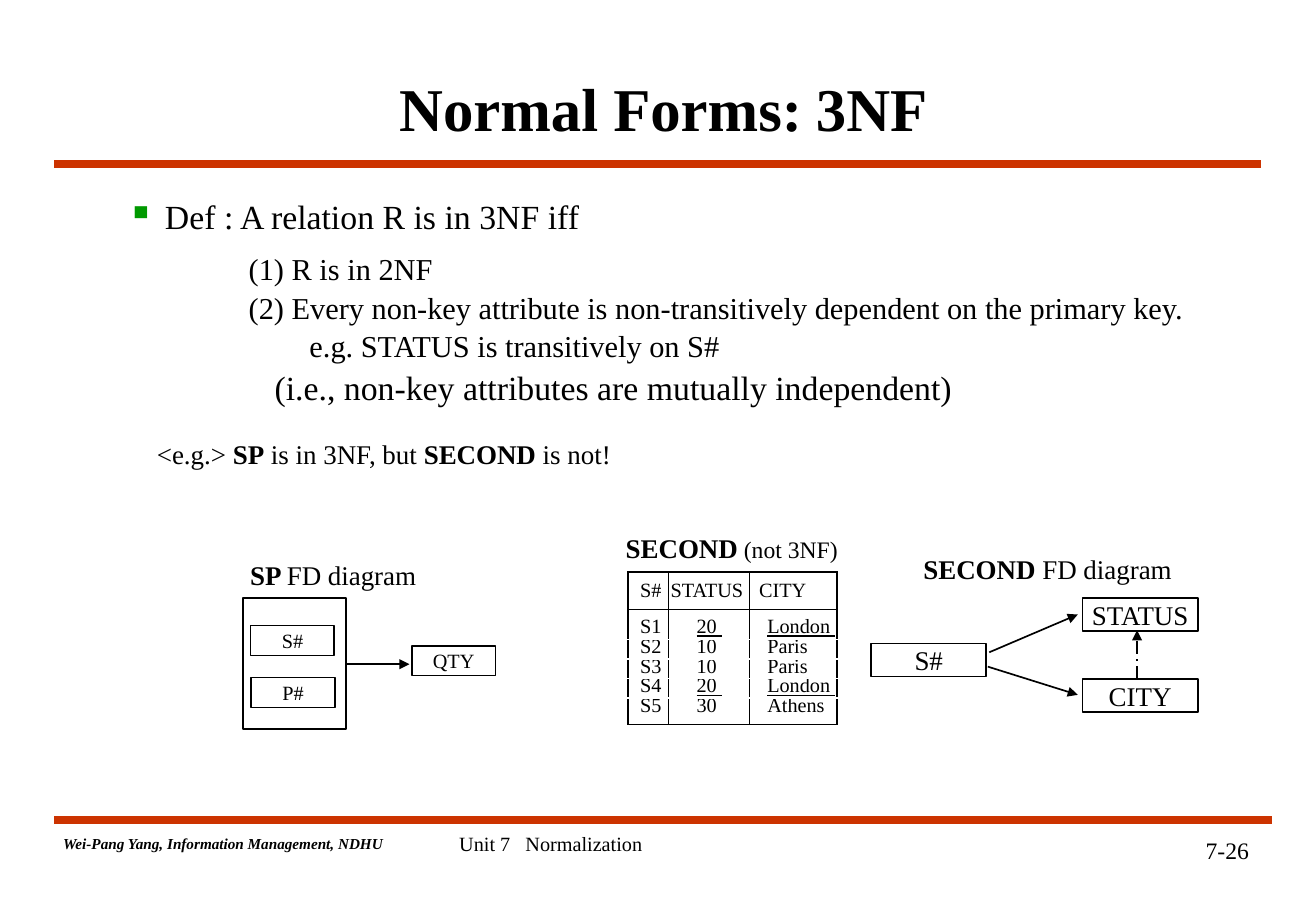
from dataclasses import dataclass

from lxml import etree
from pptx import Presentation
from pptx.dml.color import RGBColor
from pptx.enum.dml import MSO_LINE
from pptx.enum.shapes import MSO_CONNECTOR, MSO_SHAPE
from pptx.enum.text import MSO_ANCHOR, PP_ALIGN
from pptx.oxml.ns import qn
from pptx.util import Cm, Pt

LEFT, CENTER, RIGHT = PP_ALIGN.LEFT, PP_ALIGN.CENTER, PP_ALIGN.RIGHT
TOP, MIDDLE = MSO_ANCHOR.TOP, MSO_ANCHOR.MIDDLE
RECTANGLE, STRAIGHT = MSO_SHAPE.RECTANGLE, MSO_CONNECTOR.STRAIGHT
LONG_DASH_DOT = MSO_LINE.LONG_DASH_DOT

FONT = "Times New Roman"
COLORS = {"ink": "000000", "paper": "FFFFFF", "rule": "CC3300", "bullet": "009900"}


def rgb(name: str) -> RGBColor:
    return RGBColor.from_string(COLORS[name])


@dataclass
class Run:
    text: str
    size: float
    bold: bool = False
    italic: bool = False
    underline: bool = False


@dataclass
class Para:
    runs: list[Run]
    align: PP_ALIGN = LEFT
    line_spacing: float = 1.0
    before: float = 0
    margin: float = 0
    bullet: str = ""


@dataclass
class Label:
    """A text box; lengths in cm."""
    x: float
    y: float
    w: float
    h: float
    paras: list[Para]
    anchor: MSO_ANCHOR = TOP


@dataclass
class Box:
    """A bordered node of a dependency diagram; lengths in cm."""
    x: float
    y: float
    w: float
    h: float
    text: str = ""
    size: float = 12


@dataclass
class Line:
    x1: float
    y1: float
    x2: float
    y2: float
    color: str = "ink"
    width: float = 1
    arrow: bool = True
    dashed: bool = False


@dataclass
class Column:
    width: float
    header_indent: float
    body_indent: float
    cells: list[str]


def write_para(paragraph, para: Para) -> None:
    paragraph.alignment = para.align
    paragraph.line_spacing = para.line_spacing
    paragraph.space_before = Pt(para.before)
    props = paragraph._p.get_or_add_pPr()
    props.set("marL", str(Cm(para.margin)))
    if para.bullet:
        props.set("indent", str(Cm(-0.79)))
        color = etree.SubElement(props, qn("a:buClr"))
        etree.SubElement(color, qn("a:srgbClr"), val=COLORS["bullet"])
        etree.SubElement(props, qn("a:buSzPct"), val="110000")
        etree.SubElement(props, qn("a:buChar"), char=para.bullet)
    for item in para.runs:
        run = paragraph.add_run()
        run.text = item.text
        font = run.font
        font.name, font.size = FONT, Pt(item.size)
        font.bold, font.italic, font.underline = item.bold, item.italic, item.underline
        font.color.rgb = rgb("ink")


def draw_label(slide, label: Label) -> None:
    frame = slide.shapes.add_textbox(
        Cm(label.x), Cm(label.y), Cm(label.w), Cm(label.h)).text_frame
    frame.word_wrap = True
    frame.vertical_anchor = label.anchor
    for i, para in enumerate(label.paras):
        write_para(frame.add_paragraph() if i else frame.paragraphs[0], para)


def draw_box(slide, box: Box) -> None:
    node = slide.shapes.add_shape(RECTANGLE, Cm(box.x), Cm(box.y), Cm(box.w), Cm(box.h))
    node.shadow.inherit = False
    node.fill.solid()
    node.fill.fore_color.rgb = rgb("paper")
    node.line.color.rgb = rgb("ink")
    node.line.width = Pt(1)
    if box.text:
        frame = node.text_frame
        frame.word_wrap = False
        frame.vertical_anchor = MIDDLE
        frame.margin_top = frame.margin_bottom = 0
        write_para(frame.paragraphs[0], Para([Run(box.text, box.size)], CENTER))


def draw_line(slide, line: Line) -> None:
    link = slide.shapes.add_connector(
        STRAIGHT, Cm(line.x1), Cm(line.y1), Cm(line.x2), Cm(line.y2))
    link.line.color.rgb = rgb(line.color)
    link.line.width = Pt(line.width)
    if line.dashed:
        link.line.dash_style = LONG_DASH_DOT
    if line.arrow:
        etree.SubElement(link.line._get_or_add_ln(), qn("a:tailEnd"), type="triangle")
    etree.SubElement(link._element.spPr, qn("a:effectLst"))


def draw_border(cell, sides: str) -> None:
    for side in sides:
        edge = etree.SubElement(cell._tc.get_or_add_tcPr(), qn(f"a:ln{side}"), w=str(Pt(1)))
        fill = etree.SubElement(edge, qn("a:solidFill"))
        etree.SubElement(fill, qn("a:srgbClr"), val=COLORS["ink"])


def draw_relation(slide, x: float, y: float, columns: list[Column],
                  heights: list[float], underlined: set[str]) -> None:
    table = slide.shapes.add_table(
        len(heights), len(columns), Cm(x), Cm(y),
        Cm(sum(c.width for c in columns)), Cm(sum(heights))).table
    table.first_row = table.horz_banding = False
    for r, height in enumerate(heights):
        table.rows[r].height = Cm(height)
    for c, column in enumerate(columns):
        table.columns[c].width = Cm(column.width)
        for r, text in enumerate(column.cells):
            cell = table.cell(r, c)
            cell.margin_left = Cm(column.body_indent if r else column.header_indent)
            cell.margin_right = cell.margin_bottom = 0
            cell.margin_top = Cm(0.2 if r == 1 else 0)
            cell.vertical_anchor = TOP if r else MIDDLE
            top = "T" if r < 2 else ""
            bottom = "B" if r in (0, len(heights) - 1) else ""
            draw_border(cell, "LR" + top + bottom)
            cell.fill.solid()
            cell.fill.fore_color.rgb = rgb("paper")
            run = Run(text, 12, underline=text.strip() in underlined)
            write_para(cell.text_frame.paragraphs[0],
                       Para([run], line_spacing=0.8 if r else 1.0))


RULES = [Line(1.14, 17.15, 26.59, 17.15, "rule", 4.5, arrow=False),
         Line(1.14, 3.43, 26.37, 3.43, "rule", 4.5, arrow=False)]

LABELS = [
    # Title and definition
    Label(2.51, 1.07, 22.71, 2.34, [Para(
        [Run("Normal Forms:", 36, True), Run(" ", 32, True), Run("3NF", 36, True)],
        CENTER)], MIDDLE),
    Label(1.14, 3.81, 25.22, 12.9, [
        Para([Run("Def : A relation R is in 3NF iff", 20)], LEFT, 1.2, 8, 2.06, "▪"),
        Para([Run("(1) R is in 2NF", 18)], LEFT, 1.2, 3.6, 3.81),
        Para([Run("(2) Every non-key attribute is non-transitively dependent "
                  "on the primary key.", 18), Run(" ", 20)], LEFT, 0.8, 4, 3.81),
        Para([Run("e.g. STATUS is transitively on S#", 18)], LEFT, 0.9, 3.6, 5.08),
        Para([Run("(i.e., non-key attributes are mutually independent)", 20)],
             LEFT, 0.9, 4, 4.35)]),
    Label(3.03, 8.89, 12, 1.17, [Para(
        [Run("<e.g.>", 16), Run(" SP", 16, True), Run(" is in 3NF, but ", 16),
         Run("SECOND", 16, True), Run(" is not!", 16)], LEFT, 1.2, 8)]),
    # Captions
    Label(4.88, 11.56, 4.17, 0.94, [Para(
        [Run("SP ", 16, True), Run("FD diagram", 16)], CENTER)]),
    Label(12.83, 11, 6, 0.91, [Para(
        [Run("SECOND", 16, True), Run(" ", 14, True), Run("(not 3NF)", 14)])]),
    Label(18.55, 11.43, 6.7, 0.94, [Para(
        [Run("SECOND ", 16, True), Run("FD diagram", 16)], CENTER)]),
    # Footer
    Label(1.07, 17.32, 8.2, 0.64, [Para(
        [Run("Wei-Pang Yang, Information Management, NDHU", 9, True, True)])]),
    Label(9.35, 17.25, 8.36, 1.27, [Para([Run("Unit 7   Normalization", 12)])]),
    Label(20.62, 17.35, 5.74, 1.27, [Para([Run("7-26", 14)], RIGHT)]),
]

SP_BOXES = [Box(5.08, 12.5, 2.16, 2.74), Box(5.24, 13.08, 1.75, 0.63, "S#"),
            Box(5.25, 14.17, 1.75, 0.63, "P#"), Box(8.61, 13.51, 1.75, 0.62, "QTY")]
SECOND_BOXES = [Box(18.21, 13.46, 2.41, 0.69, "S#", 16),
                Box(22.63, 14.2, 2.41, 0.69, "CITY", 16),
                Box(22.63, 12.5, 2.41, 0.69, "STATUS", 16)]
DEPENDENCIES = [Line(7.26, 13.89, 8.56, 13.89), Line(20.65, 13.94, 22.53, 14.53),
                Line(20.68, 13.64, 22.53, 12.85),
                Line(23.77, 14.2, 23.77, 13.18, dashed=True)]

SECOND_COLUMNS = [
    Column(0.84, 0.25, 0.25, ["S#", "S1", "S2", "S3", "S4", "S5"]),
    Column(1.7, 0.05, 0.59, ["STATUS", "20 ", "10", "10", "20 ", "30"]),
    Column(1.83, 0.2, 0.37, ["CITY", "London ", "Paris", "Paris", "London ", "Athens"]),
]
SECOND_HEIGHTS = [0.79, 0.62, 0.41, 0.41, 0.41, 0.55]


def main() -> None:
    deck = Presentation()
    deck.slide_width, deck.slide_height = Cm(27.51), Cm(19.05)
    slide = deck.slides.add_slide(deck.slide_layouts[6])
    for box in SP_BOXES + SECOND_BOXES:
        draw_box(slide, box)
    for line in RULES + DEPENDENCIES:
        draw_line(slide, line)
    draw_relation(slide, 13.13, 11.96, SECOND_COLUMNS, SECOND_HEIGHTS, {"20", "London"})
    for label in LABELS:
        draw_label(slide, label)
    deck.save("out.pptx")


if __name__ == "__main__":
    main()
